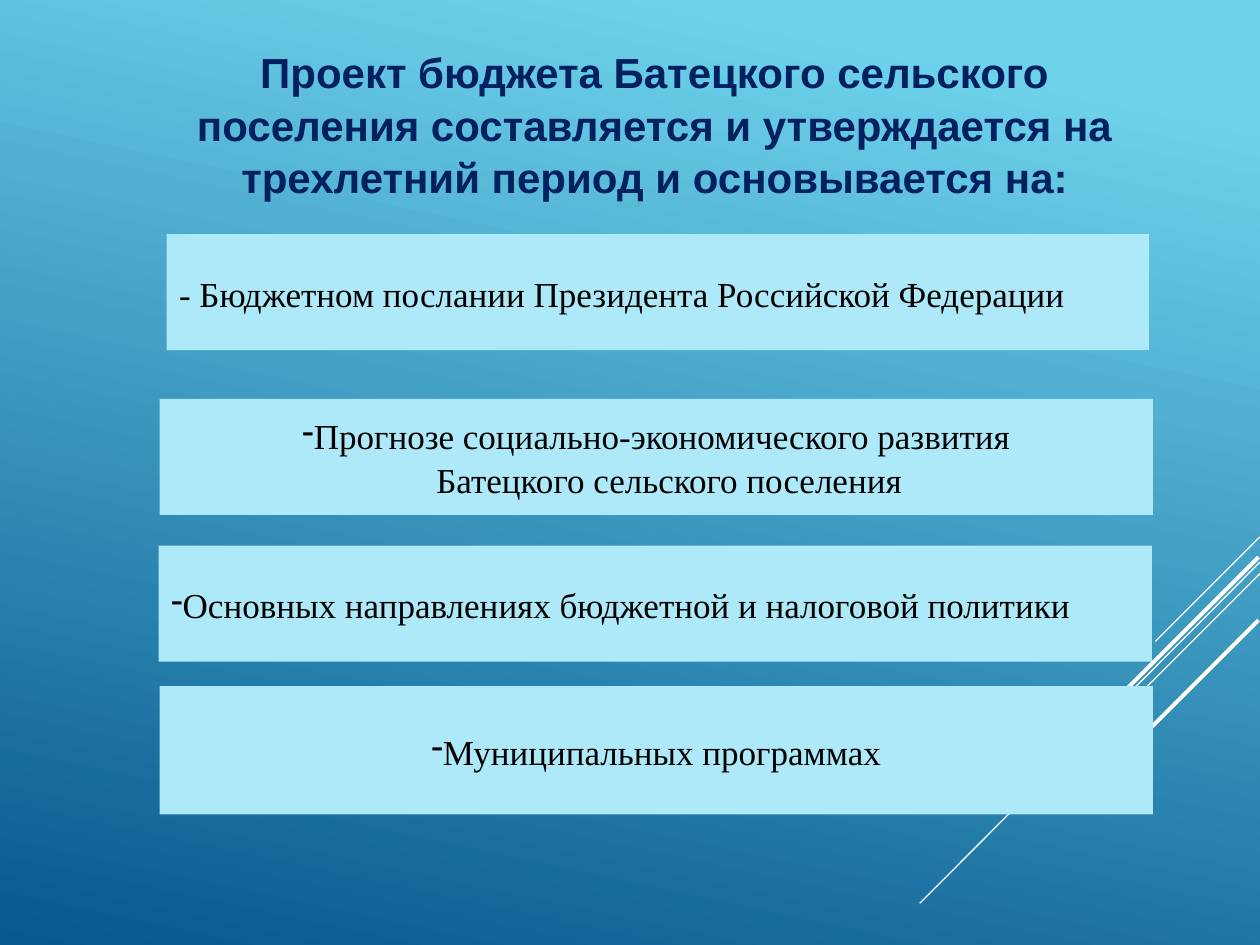
from lxml.etree import SubElement
from pptx import Presentation
from pptx.dml.color import RGBColor
from pptx.enum.shapes import MSO_CONNECTOR, MSO_SHAPE
from pptx.enum.text import MSO_ANCHOR, MSO_AUTO_SIZE, PP_ALIGN
from pptx.oxml.ns import qn
from pptx.util import Cm, Pt

COLORS = {
    "sky": "6ED2EB",
    "deep": "06588E",
    "panel": "ADE9F8",
    "title": "002060",
    "text": "000000",
    "ray": "FFFFFF",
}


def rgb(name):
    return RGBColor.from_string(COLORS[name])


class BudgetSlide:
    """Holds the style and the slide that is being filled."""

    title_font = "Arial"
    body_font = "Times New Roman"
    title_size = Pt(24)
    body_size = Pt(20)
    spacing = 1.05

    def __init__(self, prs):
        self.s = prs.slides.add_slide(prs.slide_layouts[5])

    def background(self):
        fill = self.s.background.fill
        fill.gradient()
        fill.gradient_angle = 258
        for stop, (name, pos) in zip(fill.gradient_stops, [("sky", 0.1), ("deep", 1)]):
            stop.color.rgb = rgb(name)
            stop.position = pos

    def ray(self, x1, y1, x2, y2, width):
        line = self.s.shapes.add_connector(
            MSO_CONNECTOR.STRAIGHT, Cm(x1), Cm(y1), Cm(x2), Cm(y2))
        line.line.color.rgb = rgb("ray")
        line.line.width = Pt(width)
        SubElement(line._element.spPr, qn("a:effectLst"))

    def title(self, text, x, y, w, h):
        sp = self.s.shapes.title
        sp.left, sp.top, sp.width, sp.height = Cm(x), Cm(y), Cm(w), Cm(h)
        tf = sp.text_frame
        tf.text = text
        tf.word_wrap = True
        tf.auto_size = MSO_AUTO_SIZE.NONE
        tf.vertical_anchor = MSO_ANCHOR.MIDDLE
        p = tf.paragraphs[0]
        p.alignment = PP_ALIGN.CENTER
        p.font.bold = True
        self.format(p, self.title_font, self.title_size, "title")

    def panel(self, lines, x, y, w, h, align, bullet=True):
        """Add a box whose first line may have a dash and whose others are indented."""
        sp = self.s.shapes.add_shape(MSO_SHAPE.RECTANGLE, Cm(x), Cm(y), Cm(w), Cm(h))
        sp.shadow.inherit = False
        sp.fill.solid()
        sp.fill.fore_color.rgb = rgb("panel")
        sp.line.fill.background()
        tf = sp.text_frame
        tf.text = "\n".join(lines)
        tf.word_wrap = True
        tf.vertical_anchor = MSO_ANCHOR.MIDDLE
        for i, p in enumerate(tf.paragraphs):
            p.alignment = align
            self.format(p, self.body_font, self.body_size, "text")
            if i > 0:
                p._p.get_or_add_pPr().set("marL", str(Cm(0.52)))
            elif bullet:
                self.dash(p)

    def format(self, p, font, size, color):
        p.line_spacing = self.spacing
        p.font.name = font
        p.font.size = size
        p.font.color.rgb = rgb(color)

    def dash(self, p):
        """Give the paragraph a hanging-free dash bullet in the text colour."""
        pPr = p._p.get_or_add_pPr()
        pPr.set("marL", "0")
        pPr.set("indent", "0")
        bullet = [pPr.makeelement(qn("a:buClr")),
                  pPr.makeelement(qn("a:buChar"), {"char": "-"})]
        SubElement(bullet[0], qn("a:srgbClr"), val=COLORS["text"])
        # Bullets stand before the default run properties
        for el in bullet:
            pPr.find(qn("a:defRPr")).addprevious(el)


def main():
    prs = Presentation()
    prs.slide_width, prs.slide_height = Cm(25.4), Cm(19.05)
    slide = BudgetSlide(prs)
    slide.background()

    for ray in [
        (25.4, 10.82, 23.29, 12.93, 0.75),
        (25.4, 11.33, 18.54, 18.21, 0.75),
        (25.4, 11.56, 21.03, 15.93, 0.75),
        (25.37, 11.23, 21.39, 15.21, 2.25),
        (25.37, 12.5, 22.48, 15.39, 2.25),
    ]:
        slide.ray(*ray)

    left, center = PP_ALIGN.LEFT, PP_ALIGN.CENTER
    slide.panel(["- Бюджетном послании Президента Российской Федерации"],
                3.36, 4.72, 19.8, 2.34, left, bullet=False)
    slide.panel(["Прогнозе социально-экономического развития",
                 "Батецкого сельского поселения"],
                3.22, 8.04, 20.02, 2.34, center)
    slide.panel(["Основных направлениях бюджетной и налоговой политики"],
                3.2, 11, 20.02, 2.34, left)
    slide.panel(["Муниципальных программах"],
                3.22, 13.83, 20.02, 2.59, center)

    slide.title("Проект бюджета Батецкого сельского поселения составляется "
                "и утверждается на трехлетний период и основывается на:",
                2.92, 0.23, 20.55, 4.5)
    prs.save("out.pptx")


if __name__ == "__main__":
    main()
